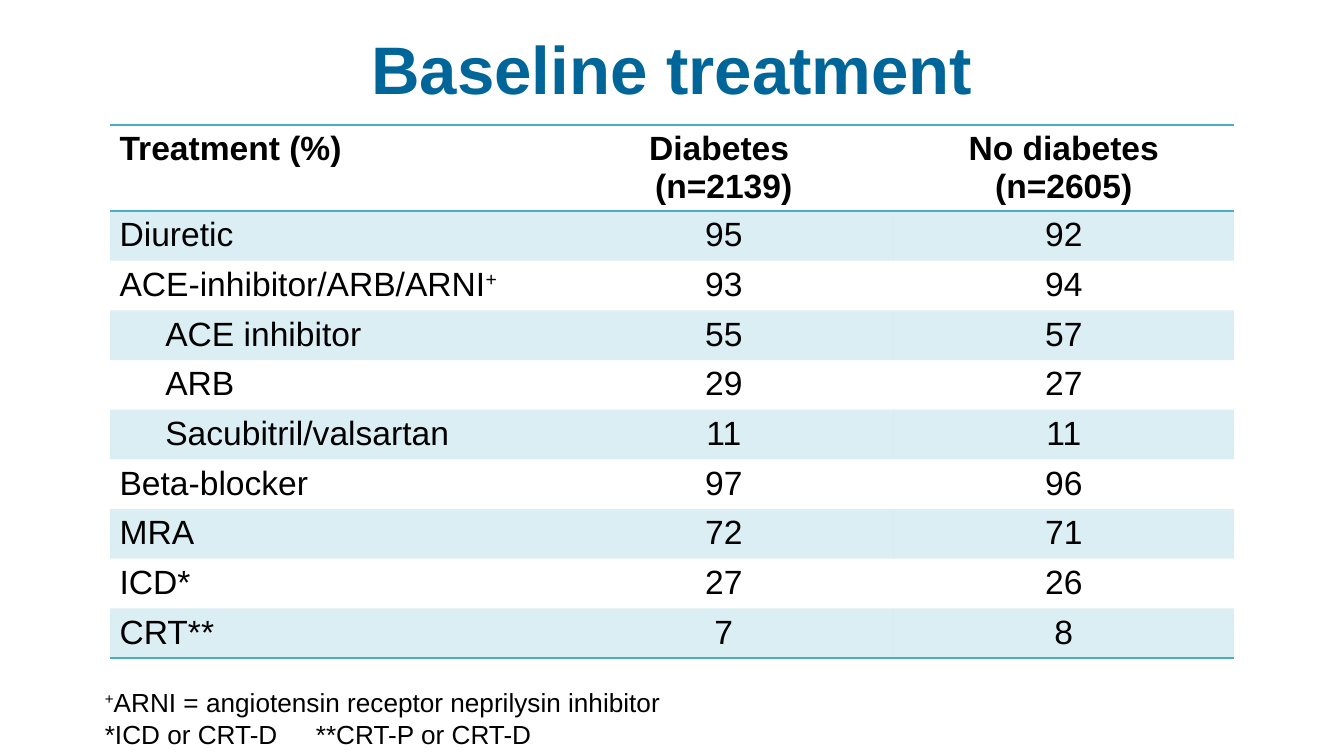
from lxml import etree
from pptx import Presentation, util as u
from pptx.dml.color import RGBColor
from pptx.enum import text as t
from pptx.oxml import ns

BLUE, TEAL, BLACK = "006699", "4BACC6", "000000"
SLIDE_WIDTH = u.Inches(10)
SLIDE_HEIGHT = SLIDE_WIDTH * 9 // 16
TITLE = "Baseline treatment"
# Text between carets is superscript; a leading tab marks a sub-category.
HEADER = ["Treatment (%)", "Diabetes \n(n=2139)", "No diabetes (n=2605)"]
ROWS = [
    ("Diuretic", 95, 92),
    ("ACE-inhibitor/ARB/ARNI^+^", 93, 94),
    ("\tACE inhibitor", 55, 57),
    ("\tARB", 29, 27),
    ("\tSacubitril/valsartan", 11, 11),
    ("Beta-blocker", 97, 96),
    ("MRA", 72, 71),
    ("ICD*", 27, 26),
    ("CRT**", 7, 8),
]
FOOTNOTE = "^+^ARNI = angiotensin receptor neprilysin inhibitor\n*ICD or CRT-D\t**CRT-P or CRT-D"
COLUMN_WIDTHS = [3.3, 2.53, 2.53]
HEADER_HEIGHT, ROW_HEIGHT, TABLE_HEIGHT = 0.42, 0.37, 4.05
NO_STYLE = "{2D5ABB26-0587-4C30-8999-92F81FD0307C}"


def add_child(parent, tag, **attributes):
    return etree.SubElement(parent, ns.qn(tag), {k: str(v) for k, v in attributes.items()})


def write(frame, content, size=18, color=BLACK, bold=False, align=t.PP_ALIGN.LEFT):
    """Write lines as paragraphs, with text between carets raised."""
    for number, line in enumerate(content.split("\n")):
        paragraph = frame.paragraphs[0] if number == 0 else frame.add_paragraph()
        paragraph.alignment = align
        for part, words in enumerate(line.split("^")):
            if not words:
                continue
            run = paragraph.add_run()
            run.text = words
            font = run.font
            font.name, font.size, font.bold = "Arial", u.Pt(size), bold
            font.color.rgb = RGBColor.from_string(color)
            if part % 2:
                font._element.set("baseline", "30000")


def add_rule(cell, side):
    line = add_child(cell._tc.get_or_add_tcPr(), f"a:ln{side}", w=u.Pt(1))
    add_child(add_child(line, "a:solidFill"), "a:srgbClr", val=TEAL)


def fill_cell(cell, banded):
    if banded:
        cell.fill.solid()
        cell.fill.fore_color.rgb = RGBColor.from_string(TEAL)
        color = cell._tc.tcPr.find(ns.qn("a:solidFill")).find(ns.qn("a:srgbClr"))
        add_child(color, "a:alpha", val=20000)
    else:
        cell.fill.background()


def add_treatment_table(slide):
    rows = [HEADER] + ROWS
    frame = slide.shapes.add_table(
        len(rows), len(HEADER), u.Inches(0.82), u.Inches(0.93),
        u.Inches(sum(COLUMN_WIDTHS)), u.Inches(TABLE_HEIGHT))
    table = frame.table
    table.first_row = table.horz_banding = False
    table._tbl.tblPr.find(ns.qn("a:tableStyleId")).text = NO_STYLE
    for column, width in zip(table.columns, COLUMN_WIDTHS):
        column.width = u.Inches(width)
    for r, values in enumerate(rows):
        table.rows[r].height = u.Inches(ROW_HEIGHT if r else HEADER_HEIGHT)
        for c, value in enumerate(values):
            cell = table.cell(r, c)
            cell.margin_left = cell.margin_right = u.Inches(0.07)
            cell.margin_top = cell.margin_bottom = u.Inches(0.04)
            content = str(value)
            write(cell.text_frame, content.lstrip("\t"), bold=r == 0,
                  align=t.PP_ALIGN.CENTER if c else t.PP_ALIGN.LEFT)
            if content.startswith("\t"):
                properties = cell.text_frame.paragraphs[0]._p.get_or_add_pPr()
                properties.set("marL", str(u.Inches(0.34)))
            if r == 0:
                add_rule(cell, "T")
            if r in (0, len(ROWS)):
                add_rule(cell, "B")
            fill_cell(cell, banded=r % 2 == 1)
    frame.height = u.Inches(TABLE_HEIGHT)


def add_footnote(slide):
    box = slide.shapes.add_textbox(u.Inches(0.64), u.Inches(5.06), u.Inches(6.34), u.Inches(0.57))
    frame = box.text_frame
    frame.word_wrap = True
    frame.margin_left = u.Inches(0.14)
    write(frame, FOOTNOTE, size=14)
    tabs = add_child(frame.paragraphs[1]._p.get_or_add_pPr(), "a:tabLst")
    add_child(tabs, "a:tab", pos=u.Inches(1.57), algn="l")


def main():
    presentation = Presentation()
    presentation.slide_width, presentation.slide_height = SLIDE_WIDTH, SLIDE_HEIGHT
    slide = presentation.slides.add_slide(presentation.slide_layouts[5])
    title = slide.shapes.title
    title.left, title.top = u.Inches(0.5), u.Inches(0.03)
    title.width, title.height = u.Inches(9), u.Inches(0.94)
    title.text_frame.vertical_anchor = t.MSO_ANCHOR.MIDDLE
    write(title.text_frame, TITLE, size=36, color=BLUE, bold=True, align=t.PP_ALIGN.CENTER)
    add_treatment_table(slide)
    add_footnote(slide)
    presentation.save("out.pptx")


if __name__ == "__main__":
    main()
